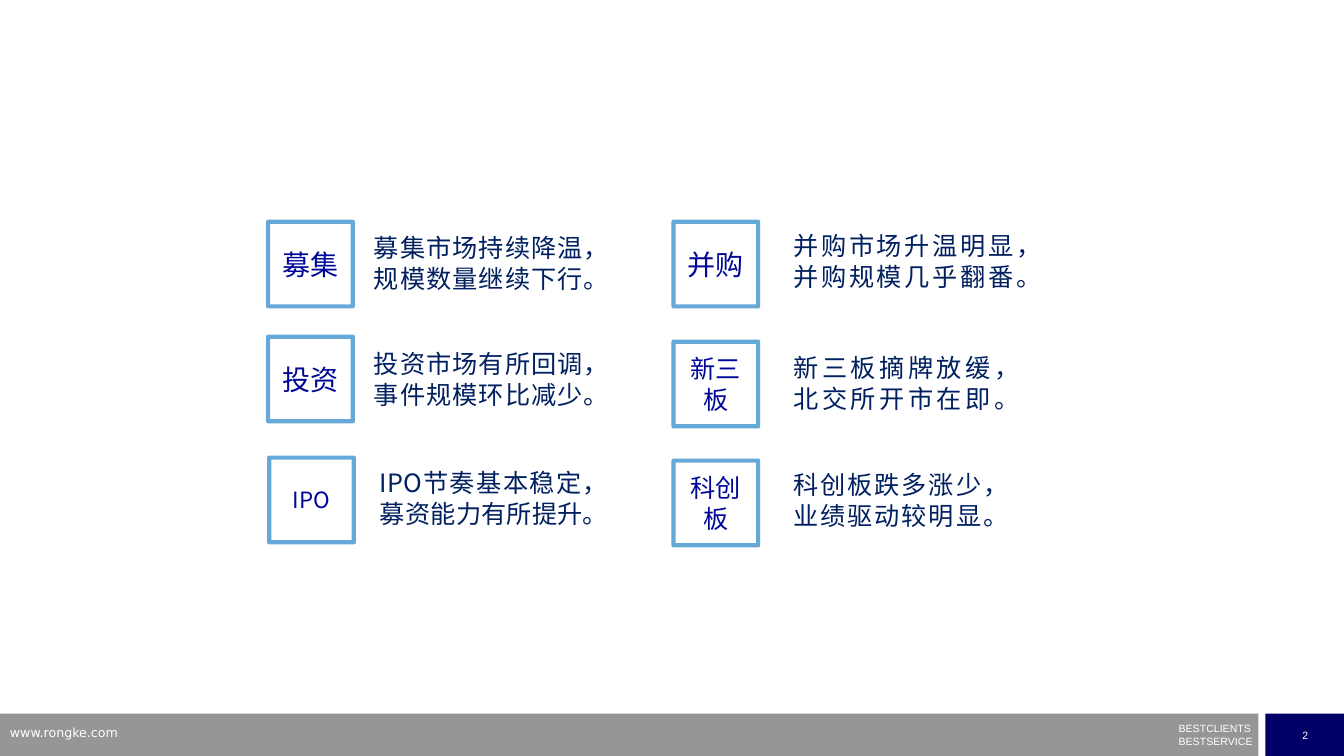
from lxml import etree
from pptx import Presentation
from pptx.dml.color import RGBColor
from pptx.enum.lang import MSO_LANGUAGE_ID
from pptx.enum.shapes import MSO_SHAPE
from pptx.enum.text import MSO_ANCHOR, MSO_AUTO_SIZE, PP_ALIGN
from pptx.oxml.ns import qn
from pptx.util import Inches, Pt

WHITE = RGBColor(0xFF, 0xFF, 0xFF)
GREY = RGBColor(0x96, 0x96, 0x96)
NAVY = RGBColor(0x00, 0x00, 0x66)
BORDER = RGBColor(0x00, 0x70, 0xC0)
LABEL = RGBColor(0x00, 0x07, 0x98)
BODY = RGBColor(0x00, 0x20, 0x60)
LABEL_FONT, BODY_FONT = "Noto Sans CJK JP", "Noto Sans CJK SC"
BOX_SIDE, TEXT_HEIGHT = 0.84, 0.71

# label, label size, box (left, top), text (left, top, width), paragraphs
TOPICS = [
    ("募集", 20, (2.66, 2.2), (3.61, 2.26, 2.28),
     ["募集市场持续降温，", "规模数量继续下行。"]),
    ("投资", 20, (2.66, 3.34), (3.61, 3.41, 2.28),
     ["投资市场有所回调，事件规模环比减少。"]),
    ("IPO", 16, (2.67, 4.54), (3.67, 4.59, 2.21),
     ["IPO节奏基本稳定，", "募资能力有所提升。"]),
    ("并购", 20, (6.68, 2.2), (7.77, 2.24, 2.41),
     ["并购市场升温明显，", "并购规模几乎翻番。"]),
    ("新三板", 18, (6.68, 3.39), (7.77, 3.45, 2.19),
     ["新三板摘牌放缓，", "北交所开市在即。"]),
    ("科创板", 18, (6.68, 4.57), (7.77, 4.61, 2.08),
     ["科创板跌多涨少，", "业绩驱动较明显。"]),
]


def write(tf, lines, size, font, color, align=PP_ALIGN.LEFT):
    tf.text = "\n".join(lines)
    for p in tf.paragraphs:
        p.alignment = align
        p.font.size = Pt(size)
        p.font.name = font
        p.font.color.rgb = color


def set_chinese(tf, font):
    """Use the font for Chinese characters and let punctuation hang."""
    for p in tf.paragraphs:
        p.font.language_id = MSO_LANGUAGE_ID.SIMPLIFIED_CHINESE
        pPr = p._p.get_or_add_pPr()
        pPr.set("eaLnBrk", "1")
        pPr.set("hangingPunct", "1")
        latin = pPr.find(".//" + qn("a:latin"))
        ea = etree.Element(qn("a:ea"), typeface=font)
        latin.addnext(ea)


def add_rect(s, left, top, width, height, fill=None):
    sp = s.shapes.add_shape(MSO_SHAPE.RECTANGLE, Inches(left), Inches(top),
                            Inches(width), Inches(height))
    sp.shadow.inherit = False
    if fill is None:
        sp.fill.background()
    else:
        sp.fill.solid()
        sp.fill.fore_color.rgb = fill
        sp.line.fill.background()
    sp.text_frame.vertical_anchor = MSO_ANCHOR.MIDDLE
    return sp


def add_text(s, left, top, width, height):
    tb = s.shapes.add_textbox(Inches(left), Inches(top), Inches(width), Inches(height))
    tb.text_frame.word_wrap = True
    return tb.text_frame


def add_label(s, left, top, label, size):
    sp = add_rect(s, left, top, BOX_SIDE, BOX_SIDE)
    sp.line.color.rgb = BORDER
    sp.line.width = Pt(3)
    color = sp.line._ln.find(".//" + qn("a:srgbClr"))
    etree.SubElement(color, qn("a:alpha"), val="60000")
    write(sp.text_frame, [label], size, LABEL_FONT, LABEL, PP_ALIGN.CENTER)
    set_chinese(sp.text_frame, LABEL_FONT)


def add_summary(s, left, top, width, lines):
    tf = add_text(s, left, top, width, TEXT_HEIGHT)
    tf.auto_size = MSO_AUTO_SIZE.SHAPE_TO_FIT_TEXT
    write(tf, lines, 18, BODY_FONT, BODY, PP_ALIGN.JUSTIFY)
    set_chinese(tf, BODY_FONT)


def add_footer(s, top, height):
    add_rect(s, 0, top, 12.48, height, GREY)
    number = add_rect(s, 12.55, top, 0.79, height, NAVY).text_frame
    number.word_wrap = False
    write(number, ["2"], 7.5, "Arial", WHITE, PP_ALIGN.CENTER)

    slogan = add_text(s, 11.69, top + 0.14, 0.76, 0.2)
    slogan.margin_left = slogan.margin_right = 0
    slogan.margin_top = slogan.margin_bottom = 0
    slogan.auto_size = MSO_AUTO_SIZE.SHAPE_TO_FIT_TEXT
    write(slogan, ["BESTCLIENTS", "BESTSERVICE"], 7.5, "Arial", WHITE)
    for p in slogan.paragraphs:
        p.line_spacing = 0.5
    slogan.paragraphs[1].space_before = Pt(4.3)

    address = add_text(s, 0, top + 0.06, 3.2, 0.26)
    write(address, ["www.rongke.com"], 9, "DejaVu Sans", WHITE)


def main():
    prs = Presentation()
    prs.slide_width, prs.slide_height = Inches(13.33), Inches(7.5)
    s = prs.slides.add_slide(prs.slide_layouts[6])
    add_footer(s, 7.08, 0.42)
    for label, size, box, text, lines in TOPICS:
        add_label(s, *box, label, size)
        add_summary(s, *text, lines)
    prs.save("out.pptx")


if __name__ == "__main__":
    main()
